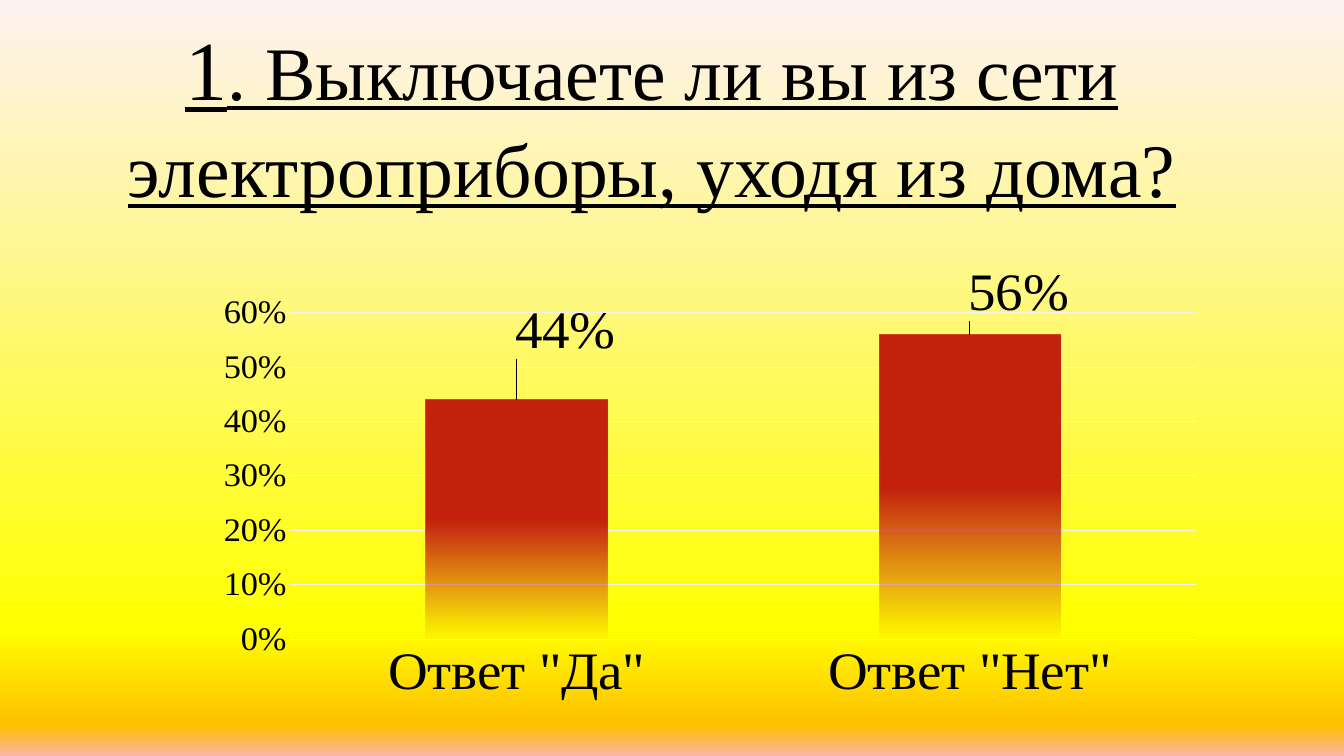
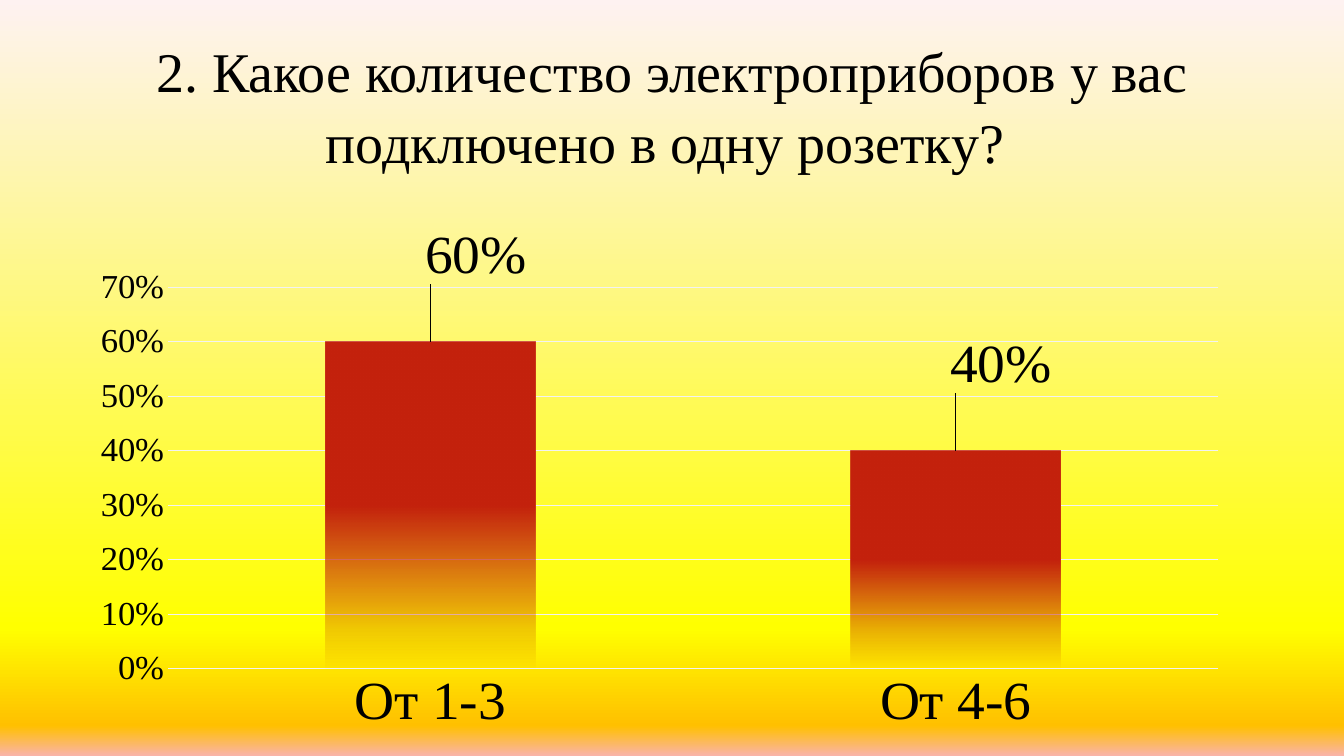
from lxml import etree
from pptx import Presentation
from pptx.chart.data import CategoryChartData
from pptx.dml.color import RGBColor
from pptx.enum.chart import XL_CHART_TYPE, XL_LABEL_POSITION, XL_TICK_MARK
from pptx.enum.text import MSO_ANCHOR, MSO_AUTO_SIZE, PP_ALIGN
from pptx.oxml.ns import qn
from pptx.util import Inches, Pt

COLUMNS = XL_CHART_TYPE.COLUMN_CLUSTERED
OUTSIDE_END = XL_LABEL_POSITION.OUTSIDE_END
NO_TICK = XL_TICK_MARK.NONE
TOP = MSO_ANCHOR.TOP
NO_AUTOFIT = MSO_AUTO_SIZE.NONE
CENTER = PP_ALIGN.CENTER

FONT = "Times New Roman"
BLACK = "000000"
GRID = "F2F2F2"
RED = "C4220D"
# Gradient stops: position in percent, colour, opacity in percent
BACKGROUND = [(0, "FEF2F1", 100), (83, "FFFF00", 100),
              (96, "FFC000", 100), (100, "F9B3AA", 100)]
BAR_FILL = [(50, RED, 100), (100, RED, 0)]
PLOT_AREA = {"x": 0.05, "y": 0.22, "w": 0.93, "h": 0.71}
LABEL_SIZE = 40
SCALE_SIZE = 25
TITLE_ONLY = 5


def color(value):
    return RGBColor.from_string(value)


def format_font(font, size, underline=None):
    font.name = FONT
    font.size = Pt(size)
    font.color.rgb = color(BLACK)
    if underline is not None:
        font.underline = underline


def add_run(paragraph, text, **style):
    run = paragraph.add_run()
    run.text = text
    format_font(run.font, **style)


def set_gradient(fill, element, stops):
    """Fill with stops running downwards; element is the XML holding the fill."""
    fill.gradient()
    gradient = next(element.iter(qn("a:gradFill")))
    for child in list(gradient):
        gradient.remove(child)
    stop_list = etree.SubElement(gradient, qn("a:gsLst"))
    for position, value, opacity in stops:
        stop = etree.SubElement(stop_list, qn("a:gs"), pos=str(position * 1000))
        stop_color = etree.SubElement(stop, qn("a:srgbClr"), val=value)
        if opacity < 100:
            etree.SubElement(stop_color, qn("a:alpha"), val=str(opacity * 1000))
    etree.SubElement(gradient, qn("a:lin"), ang="5400000", scaled="0")


def make_layout(inner=False, **fractions):
    """Return a manual chart layout given as fractions of the chart."""
    layout = etree.Element(qn("c:layout"))
    manual = etree.SubElement(layout, qn("c:manualLayout"))
    if inner:
        etree.SubElement(manual, qn("c:layoutTarget"), val="inner")
        for mode in ("xMode", "yMode"):
            etree.SubElement(manual, qn("c:" + mode), val="edge")
    for name, value in fractions.items():
        etree.SubElement(manual, qn("c:" + name), val=str(value))
    return layout


class Deck:
    """Holds the presentation, its shared style and the current slide."""

    def __init__(self):
        self.presentation = Presentation()
        self.presentation.slide_width = Inches(13.33)
        self.presentation.slide_height = Inches(7.5)
        master = self.presentation.slide_master
        set_gradient(master.background.fill, master.element, BACKGROUND)
        self.slide = None

    def add_slide(self):
        layout = self.presentation.slide_layouts[TITLE_ONLY]
        self.slide = self.presentation.slides.add_slide(layout)

    def add_title(self, box, runs):
        title = self.slide.shapes.title
        title.left, title.top, title.width, title.height = map(Inches, box)
        frame = title.text_frame
        frame.word_wrap = True
        frame.auto_size = NO_AUTOFIT
        frame.vertical_anchor = TOP
        paragraph = frame.paragraphs[0]
        paragraph.alignment = CENTER
        paragraph.line_spacing = 1.06
        for text, style in runs:
            add_run(paragraph, text, **style)

    def add_answers(self, box, answers, maximum, label_shifts):
        """Add a column chart; label_shifts move each value label."""
        data = CategoryChartData(number_format="0%")
        data.categories = list(answers)
        data.add_series("Series 1", list(answers.values()))
        frame = self.slide.shapes.add_chart(COLUMNS, *map(Inches, box), data)
        chart = frame.chart
        chart.has_title = False
        chart.has_legend = False
        format_font(chart.font, SCALE_SIZE)
        self.format_axes(chart, maximum)
        plot_area = chart.element.find(".//" + qn("c:plotArea"))
        for old_layout in plot_area.findall(qn("c:layout")):
            plot_area.remove(old_layout)
        plot_area.insert(0, make_layout(inner=True, **PLOT_AREA))
        plot = chart.plots[0]
        plot.gap_width = 150
        plot.vary_by_categories = False
        series = plot.series[0]
        series.invert_if_negative = False
        set_gradient(series.format.fill, plot_area, BAR_FILL)
        self.format_labels(series, label_shifts)

    def format_axes(self, chart, maximum):
        for axis, size in ((chart.category_axis, LABEL_SIZE),
                           (chart.value_axis, SCALE_SIZE)):
            axis.major_tick_mark = NO_TICK
            axis.minor_tick_mark = NO_TICK
            axis.format.line.fill.background()
            format_font(axis.tick_labels.font, size)
        scale = chart.value_axis
        scale.minimum_scale = 0
        scale.maximum_scale = maximum
        scale.major_unit = 0.1
        scale.tick_labels.number_format = "0%"
        scale.tick_labels.number_format_is_linked = False
        line = scale.major_gridlines.format.line
        line.color.rgb = color(GRID)
        line.width = Pt(0.75)

    def format_labels(self, series, shifts):
        labels = series.data_labels
        labels.show_value = True
        labels.number_format = "0%"
        labels.number_format_is_linked = False
        labels.position = OUTSIDE_END
        format_font(labels.font, LABEL_SIZE)
        for index, (x, y) in enumerate(shifts):
            label = series.points[index].data_label
            format_font(label.font, LABEL_SIZE)
            label.position = OUTSIDE_END
        elements = labels._element.findall(qn("c:dLbl"))
        for element, (x, y) in zip(elements, shifts):
            element.insert(1, make_layout(x=x, y=y))


def main():
    deck = Deck()

    deck.add_slide()
    deck.add_title((-0.4, 0.05, 13.73, 2), [
        ("1", {"size": 60, "underline": True}),
        (". Выключаете ли вы из сети электроприборы, уходя из дома?",
         {"size": 54, "underline": True}),
    ])
    deck.add_answers((2.22, 2.1, 9.84, 4.85),
                     {'Ответ "Да"': 0.44, 'Ответ "Нет"': 0.56},
                     maximum=0.6, label_shifts=[(0.05, -0.08), (0.05, -0.02)])

    deck.add_slide()
    deck.add_title((0, 0.27, 13.33, 1.45), [
        ("2. Какое количество электроприборов у вас подключено "
         "в одну розетку? ", {"size": 40}),
    ])
    deck.add_answers((1, 1.68, 11.31, 5.57), {"От 1-3": 0.6, "От 4-6": 0.4},
                     maximum=0.7, label_shifts=[(0.04, -0.1), (0.04, -0.1)])

    deck.presentation.save("out.pptx")


if __name__ == "__main__":
    main()
